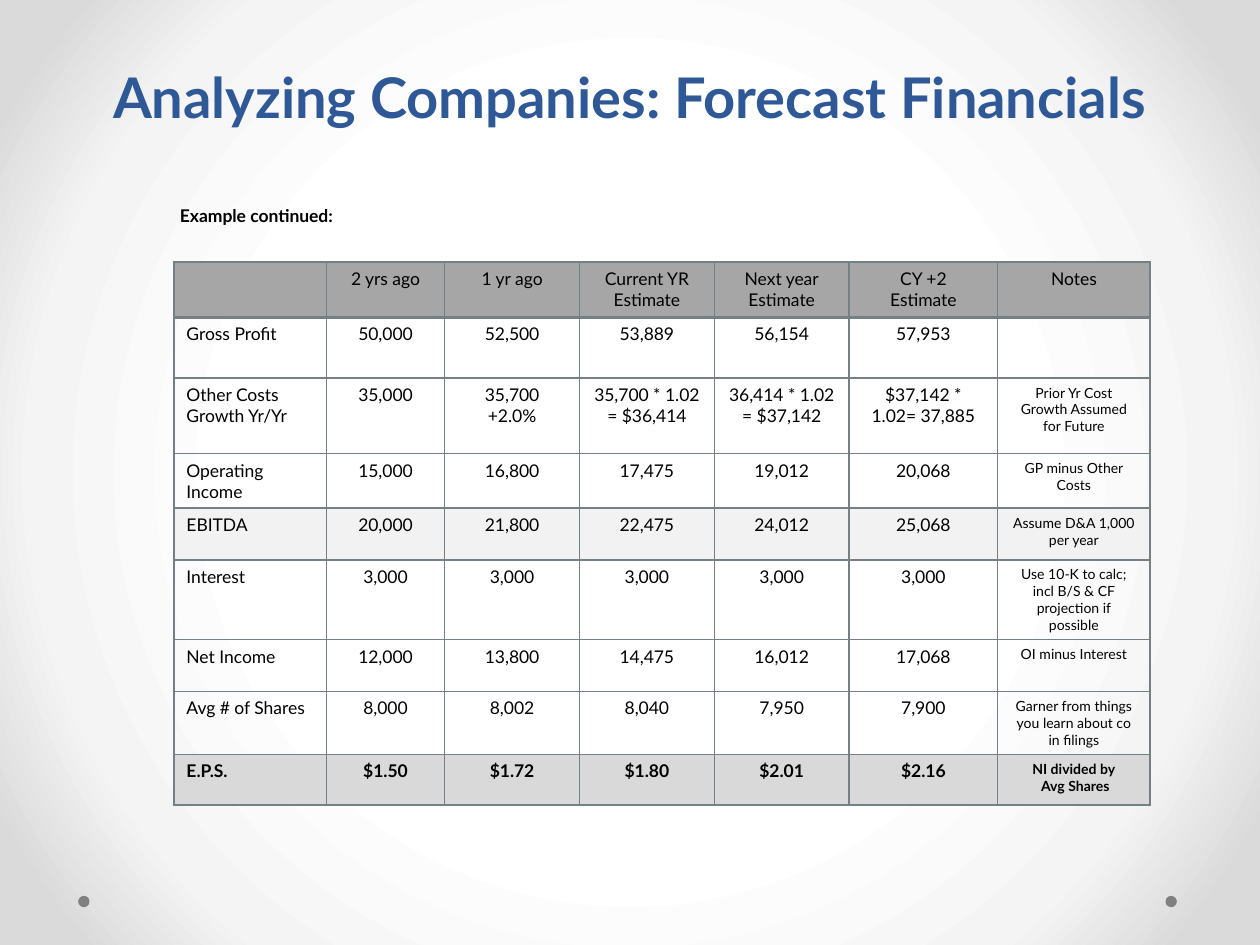
from lxml import etree
from pptx import Presentation
from pptx.dml.color import RGBColor
from pptx.enum.shapes import MSO_SHAPE
from pptx.enum.text import MSO_ANCHOR, MSO_AUTO_SIZE, PP_ALIGN
from pptx.oxml import parse_xml
from pptx.oxml.ns import nsdecls, qn
from pptx.util import Inches, Pt

LEFT, CENTER = PP_ALIGN.LEFT, PP_ALIGN.CENTER
OVAL = MSO_SHAPE.OVAL
WIDTH, HEIGHT = Inches(10), Inches(7.5)
TITLE_ONLY = 5
FONT = "Lato"

BLUE = RGBColor(0x2F, 0x58, 0x97)
BLACK = RGBColor(0x00, 0x00, 0x00)
DOT_GRAY = RGBColor(0x80, 0x80, 0x80)
HEADER_GRAY = RGBColor(0xA6, 0xA6, 0xA6)
SUBTOTAL_GRAY = RGBColor(0xF2, 0xF2, 0xF2)
TOTAL_GRAY = RGBColor(0xD9, 0xD9, 0xD9)
BORDER = RGBColor(0x75, 0x80, 0x85)
BACKGROUND_STOPS = [
    (50, RGBColor(0xFF, 0xFF, 0xFF)),
    (76, RGBColor(0xF4, 0xF4, 0xF4)),
    (92, RGBColor(0xDA, 0xDA, 0xDA)),
]

# Boxes: left, top, width, height in inches
TITLE_BOX = (0.5, 0, 9, 1.08)
CAPTION_BOX = (1.33, 1.58, 5, 0.27)
TABLE_BOX = (1.38, 2.08, 7.75, 4.3)
DOT_BOXES = [(left, 7.11, 0.09, 0.09) for left in (0.62, 9.25)]

COLUMN_SHARES = [1.21, 0.94, 1.07, 1.07, 1.07, 1.18, 1.21]
ROW_SHARES = [0.44, 0.48, 0.6, 0.43, 0.41, 0.63, 0.41, 0.5, 0.4]
ROW_FILLS = {0: HEADER_GRAY, 4: SUBTOTAL_GRAY, 8: TOTAL_GRAY}
FORECAST = [
    ["", "2 yrs ago", "1 yr ago", "Current YR Estimate",
     "Next year\nEstimate", "CY +2\nEstimate", "Notes"],
    ["Gross Profit", "50,000", "52,500", "53,889", "56,154", "57,953", ""],
    ["Other Costs\nGrowth Yr/Yr", "35,000", "35,700\n+2.0%",
     "35,700 * 1.02 = $36,414", "36,414 * 1.02 = $37,142",
     "$37,142 * 1.02= 37,885", "Prior Yr Cost Growth Assumed for Future"],
    ["Operating Income", "15,000", "16,800", "17,475", "19,012", "20,068",
     "GP minus Other Costs"],
    ["EBITDA", "20,000", "21,800", "22,475", "24,012", "25,068",
     "Assume D&A 1,000 per year"],
    ["Interest"] + ["3,000"] * 5
    + ["Use 10-K to calc; incl B/S & CF projection if possible"],
    ["Net Income", "12,000", "13,800", "14,475", "16,012", "17,068",
     "OI minus Interest"],
    ["Avg # of Shares", "8,000", "8,002", "8,040", "7,950", "7,900",
     "Garner from things you learn about co in filings"],
    ["E.P.S.", "$1.50", "$1.72", "$1.80", "$2.01", "$2.16",
     "NI divided by\n Avg Shares"],
]


def to_emu(box):
    return [Inches(length) for length in box]


def write_text(frame, text, size, color=BLACK, bold=False, alignment=LEFT):
    frame.text = text
    font_format = {"name": FONT, "size": Pt(size), "bold": bold}
    for paragraph in frame.paragraphs:
        paragraph.alignment = alignment
        # An empty cell keeps its size through the paragraph's own font
        for target in [paragraph, *paragraph.runs]:
            for name, value in font_format.items():
                setattr(target.font, name, value)
            target.font.color.rgb = color


def paint_background(slide):
    stops = "".join(
        f'<a:gs pos="{position * 1000}"><a:srgbClr val="{color}"/></a:gs>'
        for position, color in BACKGROUND_STOPS)
    background = parse_xml(
        f'<p:bg {nsdecls("p", "a")}><p:bgPr><a:gradFill rotWithShape="1">'
        f'<a:gsLst>{stops}</a:gsLst><a:path path="circle">'
        '<a:fillToRect l="50000" t="50000" r="50000" b="50000"/></a:path>'
        '</a:gradFill><a:effectLst/></p:bgPr></p:bg>')
    slide.element.find(qn("p:cSld")).insert(0, background)


def add_dot(slide, box):
    dot = slide.shapes.add_shape(OVAL, *to_emu(box))
    dot.shadow.inherit = False
    dot.fill.solid()
    dot.fill.fore_color.rgb = DOT_GRAY
    dot.line.fill.background()


def place_title(slide, box):
    title = slide.shapes.title
    title.left, title.top, title.width, title.height = to_emu(box)
    frame = title.text_frame
    frame.auto_size = MSO_AUTO_SIZE.NONE
    frame.vertical_anchor = MSO_ANCHOR.BOTTOM
    write_text(frame, "Analyzing Companies: Forecast Financials", 32, BLUE,
               True, CENTER)
    frame.paragraphs[0].line_spacing = Pt(58)


def add_caption(slide, box):
    frame = slide.shapes.add_textbox(*to_emu(box)).text_frame
    frame.word_wrap = True
    write_text(frame, "Example continued:", 10, bold=True)


def set_borders(cell, widths):
    properties = cell._tc.get_or_add_tcPr()
    for index, (side, width) in enumerate(widths.items()):
        line = etree.Element(qn(f"a:ln{side}"), w=str(Pt(width)))
        fill = etree.SubElement(line, qn("a:solidFill"))
        etree.SubElement(fill, qn("a:srgbClr"), val=str(BORDER))
        properties.insert(index, line)


def add_forecast_table(slide, box):
    left, top, width, height = to_emu(box)
    table = slide.shapes.add_table(
        len(FORECAST), len(COLUMN_SHARES), left, top, width, height).table
    table.first_row = table.horz_banding = False
    for column, share in zip(table.columns, COLUMN_SHARES):
        column.width = int(width * share / sum(COLUMN_SHARES))
    for row, share in zip(table.rows, ROW_SHARES):
        row.height = int(height * share / sum(ROW_SHARES))

    last_row, notes_column = len(FORECAST) - 1, len(COLUMN_SHARES) - 1
    for row_index, texts in enumerate(FORECAST):
        for column_index, text in enumerate(texts):
            cell = table.cell(row_index, column_index)
            is_note = column_index == notes_column and row_index > 0
            write_text(cell.text_frame, text, 8 if is_note else 10,
                       bold=row_index == last_row,
                       alignment=CENTER if column_index else LEFT)
            if row_index in ROW_FILLS:
                cell.fill.solid()
                cell.fill.fore_color.rgb = ROW_FILLS[row_index]
            else:
                cell.fill.background()
            # The rule under the header is twice as thick
            set_borders(cell, {"L": 1, "R": 1,
                               "T": 2 if row_index == 1 else 1,
                               "B": 2 if row_index == 0 else 1})


def main():
    presentation = Presentation()
    presentation.slide_width, presentation.slide_height = WIDTH, HEIGHT
    slide = presentation.slides.add_slide(
        presentation.slide_layouts[TITLE_ONLY])
    paint_background(slide)
    for box in DOT_BOXES:
        add_dot(slide, box)
    place_title(slide, TITLE_BOX)
    add_forecast_table(slide, TABLE_BOX)
    add_caption(slide, CAPTION_BOX)
    presentation.save("out.pptx")


if __name__ == "__main__":
    main()
